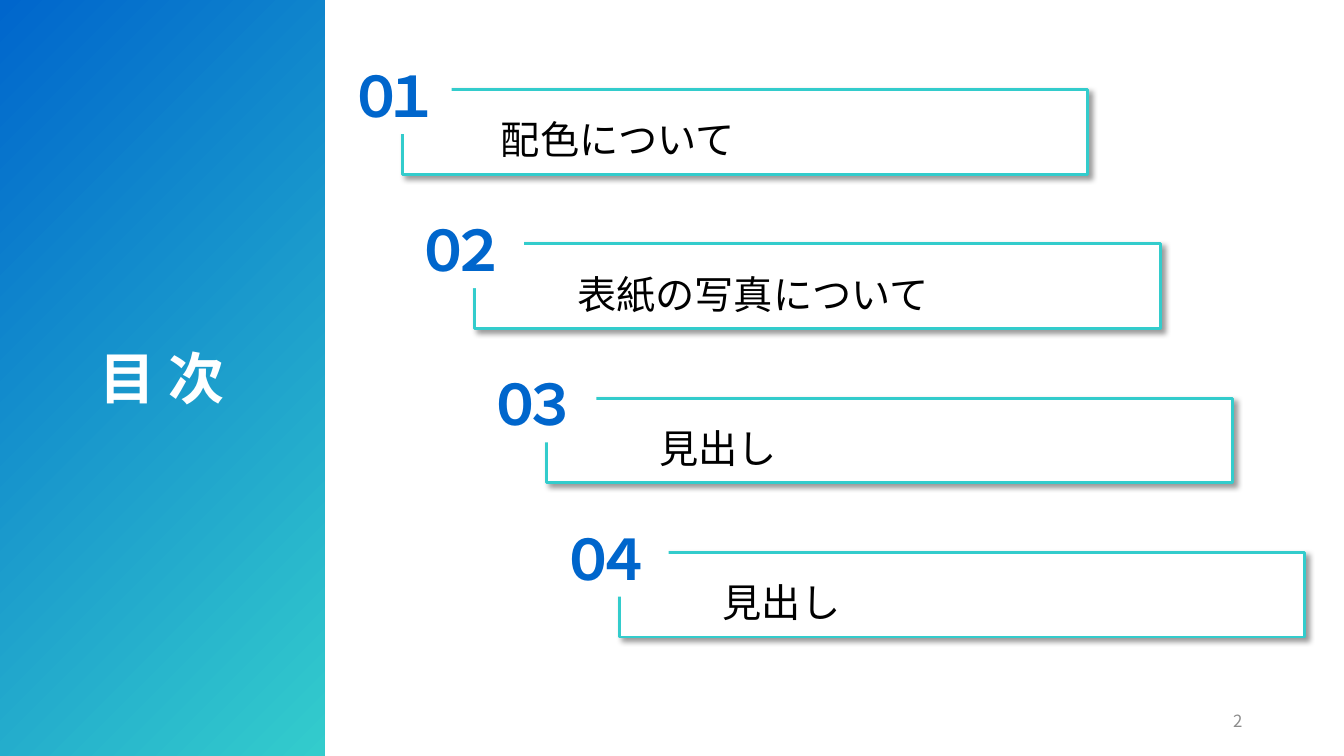
from dataclasses import dataclass

from lxml.etree import SubElement
from pptx import Presentation
from pptx.dml.color import RGBColor as RGB
from pptx.enum.shapes import MSO_SHAPE as Preset
from pptx.enum.text import MSO_ANCHOR as Anchor, PP_ALIGN as Align
from pptx.oxml import parse_xml
from pptx.oxml.ns import nsdecls, qn
from pptx.util import Inches, Pt


@dataclass(frozen=True)
class Theme:
    blue: RGB = RGB(0x00, 0x66, 0xCC)
    teal: RGB = RGB(0x33, 0xCC, 0xCC)
    white: RGB = RGB(0xFF, 0xFF, 0xFF)
    black: RGB = RGB(0x00, 0x00, 0x00)
    gray: RGB = RGB(0x8C, 0x8C, 0x8C)
    body_font: str = "Noto Sans CJK JP"
    number_font: str = "Arial"
    title_size: int = 40
    item_size: int = 28
    page_size: int = 12


theme = Theme()


def write(shape, text, size, color, font=theme.body_font, bold=False,
          align=Align.LEFT, anchor=Anchor.TOP, line_height=None, tracking=None):
    """Fill a shape with one formatted paragraph; line height and tracking are in points."""
    frame = shape.text_frame
    frame.word_wrap = True
    frame.vertical_anchor = anchor
    paragraph = frame.paragraphs[0]
    paragraph.alignment = align
    if line_height:
        paragraph.line_spacing = Pt(line_height)
    run = paragraph.add_run()
    run.text = text
    run.font.size = Pt(size)
    run.font.bold = bold
    run.font.name = font
    run.font.color.rgb = color
    properties = run.font._element
    SubElement(properties, qn("a:ea")).set("typeface", font)
    if tracking:
        properties.set("spc", str(tracking * 100))


def add_rectangle(shapes, left, top, width, height):
    rectangle = shapes.add_shape(Preset.RECTANGLE, Inches(left), Inches(top),
                                 Inches(width), Inches(height))
    rectangle.shadow.inherit = False
    rectangle.fill.solid()
    rectangle.fill.fore_color.rgb = theme.white
    rectangle.line.fill.background()
    return rectangle


presentation = Presentation()
presentation.slide_width = Inches(13.33)
presentation.slide_height = Inches(7.5)
slide = presentation.slides.add_slide(presentation.slide_layouts[5])

# Side panel, placed behind the title
panel = add_rectangle(slide.shapes, 0, 0, 3.22, 7.5)
panel.fill.gradient()
panel.fill.gradient_angle = 315
for stop, color in zip(panel.fill.gradient_stops, (theme.blue, theme.teal)):
    stop.color.rgb = color
slide.shapes._spTree.insert(2, panel._element)

title = slide.shapes.title
title.left, title.top = Inches(0), Inches(3.36)
title.width, title.height = Inches(3.21), Inches(0.77)
write(title, "目 次", theme.title_size, theme.white, bold=True, align=Align.CENTER)

# Contents: each row steps down and to the right
first_left, first_top = 3.99, 0.89
step_right, step_down = 0.717, 1.53
frame_width, frame_height = 6.8, 0.84
number_overlap, number_rise, number_height = 0.49, 0.33, 0.77
contents = [
    # number, heading, number width, heading indent, heading width
    ("０１", "配色について", 1.15, 0.88, 4.56),
    ("０２", "表紙の写真について", 1.25, 0.92, 5.82),
    ("０３", "見出し", 1.25, 1.02, 5.72),
    ("０４", "見出し", 1.25, 0.93, 5.82),
]
for row, (number, heading, number_width, indent, heading_width) in enumerate(contents):
    left = first_left + row * step_right
    top = first_top + row * step_down
    shapes = slide.shapes.add_group_shape().shapes

    frame = add_rectangle(shapes, left, top, frame_width, frame_height)
    frame.line.color.rgb = theme.teal
    frame.line.width = Pt(2)
    effects = frame._element.spPr.find(qn("a:effectLst"))
    effects.append(parse_xml(
        f'<a:outerShdw {nsdecls("a")} blurRad="{Pt(4)}" dist="{Pt(3)}" dir="2700000" '
        'algn="tl" rotWithShape="0"><a:srgbClr val="000000"><a:alpha val="40000"/>'
        '</a:srgbClr></a:outerShdw>'))

    badge = add_rectangle(shapes, left + number_overlap - number_width,
                          top - number_rise, number_width, number_height)
    write(badge, number, theme.title_size, theme.blue, font=theme.number_font,
          bold=True, align=Align.CENTER, tracking=-15)

    label = shapes.add_textbox(Inches(left + indent), Inches(top + 0.12),
                               Inches(heading_width), Inches(0.71))
    write(label, heading, theme.item_size, theme.black, line_height=40)

page_number = slide.shapes.add_textbox(Inches(9.42), Inches(6.95), Inches(3), Inches(0.4))
write(page_number, "2", theme.page_size, theme.gray, align=Align.RIGHT, anchor=Anchor.MIDDLE)

presentation.save("out.pptx")
